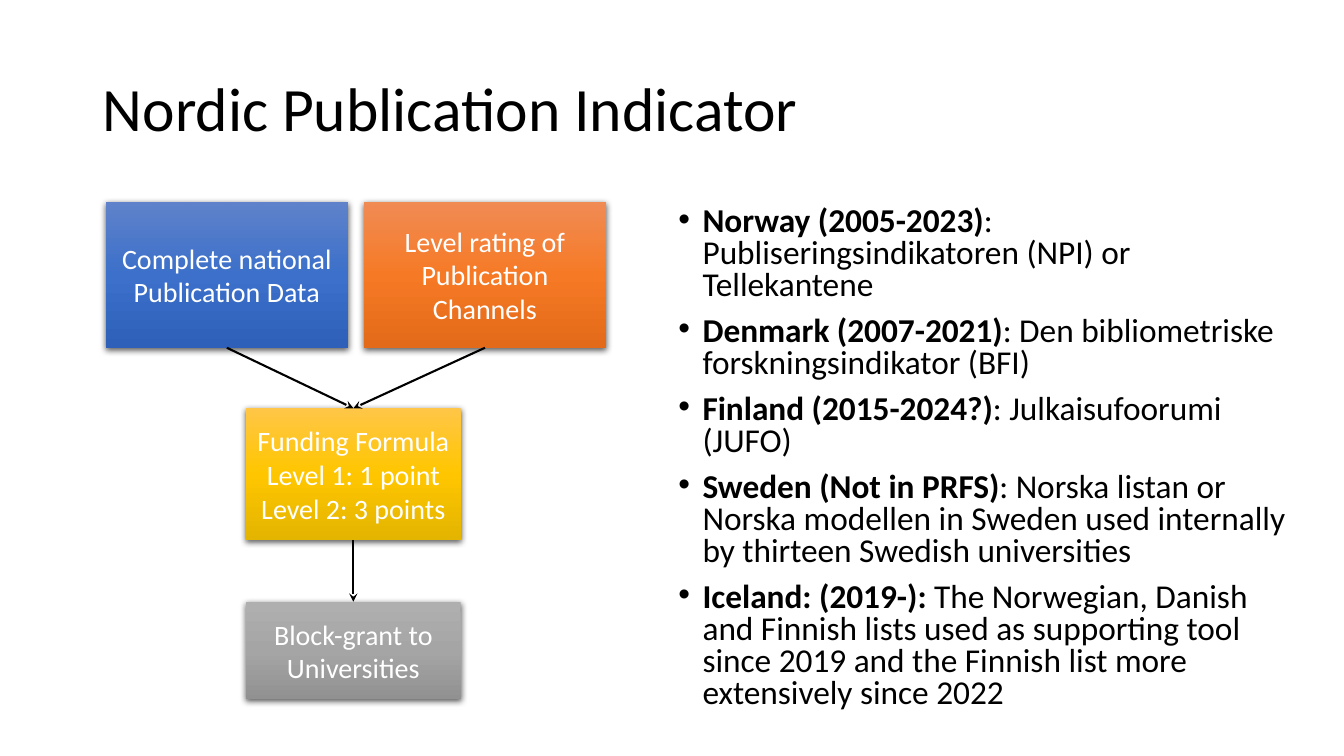
from lxml import etree
from pptx import Presentation
from pptx.dml.color import RGBColor
from pptx.enum.shapes import MSO_CONNECTOR, MSO_SHAPE
from pptx.enum.text import MSO_ANCHOR, MSO_AUTO_SIZE, PP_ALIGN
from pptx.oxml.ns import qn
from pptx.util import Pt

STRAIGHT = MSO_CONNECTOR.STRAIGHT
RECTANGLE = MSO_SHAPE.RECTANGLE
TOP, MIDDLE = MSO_ANCHOR.TOP, MSO_ANCHOR.MIDDLE
NO_FIT = MSO_AUTO_SIZE.NONE
LEFT, CENTER = PP_ALIGN.LEFT, PP_ALIGN.CENTER

EMU_PER_PX = 9144
TOP_SIDE, BOTTOM_SIDE = 0, 2
SYSTEMS = [
    ("Norway (2005-2023)", ": Publiseringsindikatoren (NPI) or Tellekantene"),
    ("Denmark (2007-2021)", ": Den bibliometriske forskningsindikator (BFI)"),
    ("Finland (2015-2024?)", ": Julkaisufoorumi (JUFO)"),
    ("Sweden (Not in PRFS)", ": Norska listan or Norska modellen in Sweden "
     "used internally by thirteen Swedish universities"),
    ("Iceland: (2019-):", " The Norwegian, Danish and Finnish lists used as "
     "supporting tool since 2019 and the Finnish list more extensively since 2022"),
]


def px(*lengths):
    return [length * EMU_PER_PX for length in lengths]


def color(value):
    return RGBColor.from_string(value)


def add_node(parent, tag, **attributes):
    node = etree.SubElement(parent, qn(tag))
    for name, value in attributes.items():
        node.set(name, str(value))
    return node


def add_span(para, text, size=20, ink="000000", bold=False, font="Calibri"):
    span = para.add_run()
    span.text = text
    span.font.size = Pt(size)
    span.font.name = font
    span.font.bold = bold
    span.font.color.rgb = color(ink)


class Slide:
    """Holds the style and the current slide, and adds elements to it."""

    def __init__(self, deck):
        self.page = deck.slides.add_slide(deck.slide_layouts[5])
        self.ink = "000000"
        self.box_ink = "FFFFFF"

    def prepare(self, shape, anchor):
        frame = shape.text_frame
        frame.word_wrap = True
        frame.auto_size = NO_FIT
        frame.vertical_anchor = anchor
        frame.margin_left, frame.margin_right, frame.margin_top, frame.margin_bottom = px(10, 10, 5, 5)
        return frame

    def title(self, text, *place):
        shape = self.page.shapes.title
        shape.left, shape.top, shape.width, shape.height = px(*place)
        para = self.prepare(shape, MIDDLE).paragraphs[0]
        para.alignment = LEFT
        para.line_spacing = 0.9
        add_span(para, text, size=44, ink=self.ink)

    def bullets(self, items, *place):
        shape = self.page.shapes.add_textbox(*px(*place))
        frame = self.prepare(shape, TOP)
        margin, indent = px(25, -24)
        for index, (name, detail) in enumerate(items):
            para = frame.add_paragraph() if index else frame.paragraphs[0]
            para.line_spacing = 0.8
            para.space_before = Pt(10 if index else 0)
            add_span(para, name, size=23.8, ink=self.ink, bold=True)
            add_span(para, detail, size=23.8, ink=self.ink)
            properties = para._p.get_or_add_pPr()
            properties.set("marL", str(margin))
            properties.set("indent", str(indent))
            add_node(properties, "a:buFont", typeface="Arial")
            add_node(properties, "a:buChar", char="•")

    def box(self, lines, stops, *place):
        shape = self.page.shapes.add_shape(RECTANGLE, *px(*place))
        properties = shape.element.spPr
        gradient = add_node(properties, "a:gradFill", rotWithShape=1)
        stop_list = add_node(gradient, "a:gsLst")
        for index, value in enumerate(stops):
            stop = add_node(stop_list, "a:gs", pos=index * 50000)
            add_node(stop, "a:srgbClr", val=value)
        add_node(gradient, "a:lin", ang=5400000, scaled=0)
        shape.line.fill.background()
        shape.shadow.inherit = False
        shadow = add_node(properties.find(qn("a:effectLst")), "a:outerShdw", blurRad=Pt(4.5),
                          dist=Pt(1.5), dir=5400000, algn="ctr", rotWithShape=0)
        add_node(add_node(shadow, "a:srgbClr", val="000000"), "a:alpha", val=63000)
        frame = self.prepare(shape, MIDDLE)
        for index, text in enumerate(lines):
            para = frame.add_paragraph() if index else frame.paragraphs[0]
            para.alignment = CENTER
            add_span(para, text, ink=self.box_ink)
        return shape

    def arrow(self, source, target):
        connector = self.page.shapes.add_connector(STRAIGHT, 0, 0, 0, 0)
        connector.begin_connect(source, BOTTOM_SIDE)
        connector.end_connect(target, TOP_SIDE)
        connector.line.color.rgb = color(self.ink)
        connector.line.width = Pt(1.5)
        properties = connector.element.spPr
        add_node(properties.find(qn("a:ln")), "a:tailEnd", type="stealth")
        add_node(properties, "a:effectLst")


def main():
    deck = Presentation()
    deck.slide_width, deck.slide_height = px(1333, 750)
    slide = Slide(deck)
    slide.title("Nordic Publication Indicator", 92, 38, 1150, 145)
    slide.bullets(SYSTEMS, 662, 200, 637, 515)
    channels = slide.box(["Level rating of Publication Channels"],
                         ["F08B54", "F67A26", "E36A18"], 361, 200, 240, 145)
    publications = slide.box(["Complete national Publication Data"],
                             ["5F82CA", "3C70CA", "2E60B9"], 105, 200, 240, 145)
    formula = slide.box(["Funding Formula", "Level 1: 1 point", "Level 2: 3 points"],
                        ["FFC647", "FFC600", "E3B400"], 244, 405, 213, 131)
    grant = slide.box(["Block-grant to Universities"],
                      ["AFAFAF", "A5A5A5", "919191"], 244, 597, 213, 97)
    for source, target in [(channels, formula), (publications, formula), (formula, grant)]:
        slide.arrow(source, target)
    deck.save("out.pptx")


if __name__ == "__main__":
    main()
